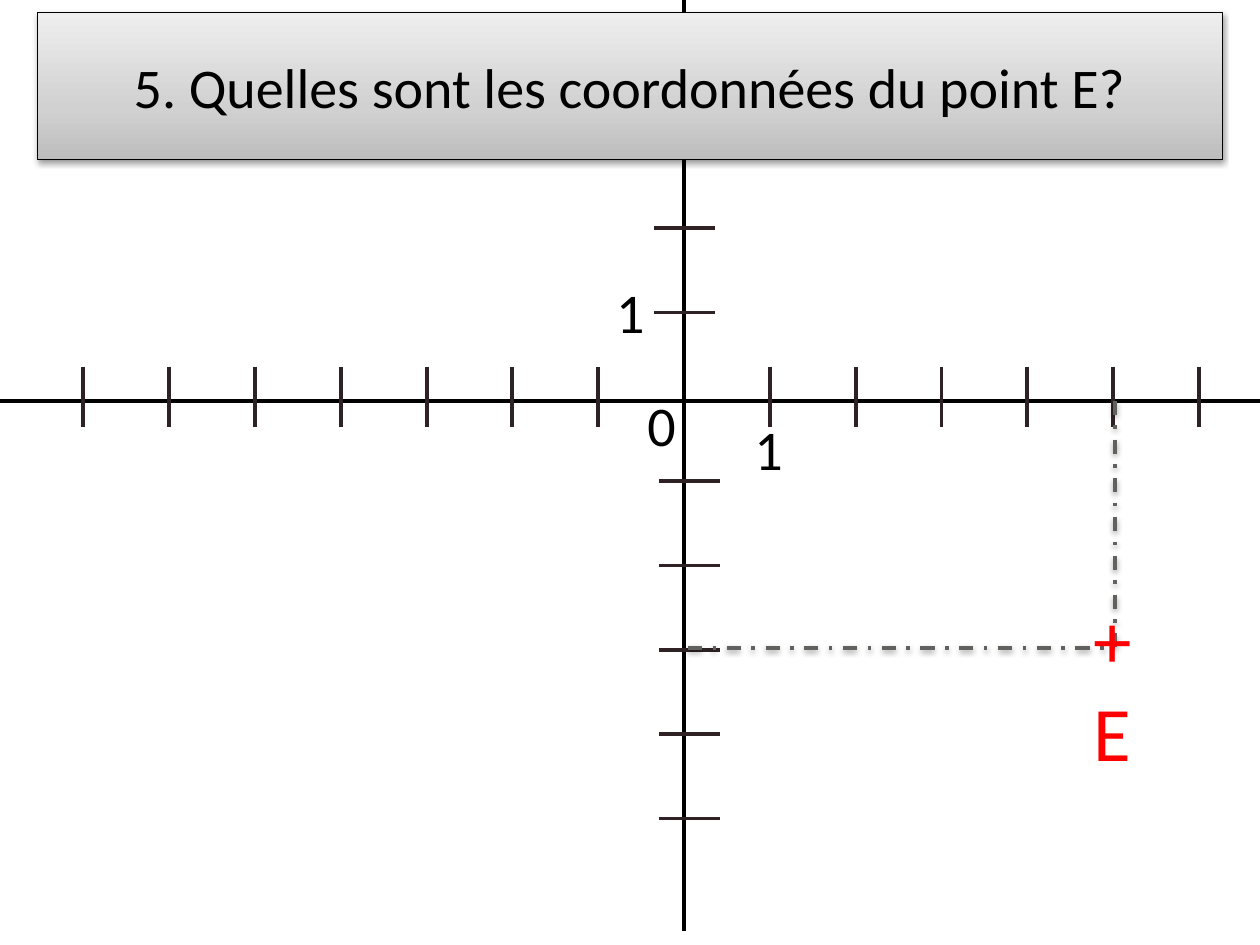
import pptx
import pptx.util
import pptx.dml.color
import pptx.enum.dml
import pptx.enum.shapes
import pptx.enum.text
import pptx.oxml
import pptx.oxml.ns
from pptx.util import Cm

NS = pptx.oxml.ns.nsdecls("a")
SHADOW = ('<a:outerShdw blurRad="40000" dist="20000" dir="5400000" rotWithShape="0">'
          '<a:srgbClr val="000000"><a:alpha val="38000"/></a:srgbClr></a:outerShdw>')
rgb = pptx.dml.color.RGBColor.from_string


def style_line(s, color, width, effect=""):
    s.line.color.rgb = rgb(color)
    s.line.width = pptx.util.Pt(width)
    s._element.spPr.append(
        pptx.oxml.parse_xml(f"<a:effectLst {NS}>{effect}</a:effectLst>"))


def add_line(x1, y1, x2, y2, color, width=2.25, effect=""):
    s = sld.shapes.add_connector(pptx.enum.shapes.MSO_CONNECTOR.STRAIGHT,
                                 Cm(x1), Cm(y1), Cm(x2), Cm(y2))
    style_line(s, color, width, effect)
    return s


prs = pptx.Presentation()
prs.slide_width, prs.slide_height = Cm(25.4), Cm(19.05)
sld = prs.slides.add_slide(prs.slide_layouts[6])

# Axes
x0, y0 = 13.79, 8.08
add_line(0, y0, 25.4, y0, "000000")
add_line(x0, 0, x0, 18.77, "000000")

# Graduations
half = 0.61
for i in range(-7, 7):
    if i:
        x = x0 + 1.73 * i
        add_line(x, 8 - half, x, 8 + half, "2E2224")
for i in range(-5, 3):
    if i:
        y = 8 - 1.7 * i
        mid = 13.8 if i > 0 else 13.9
        add_line(mid - half, y, mid + half, y, "2E2224")

# Title banner
s = sld.shapes.add_shape(pptx.enum.shapes.MSO_SHAPE.RECTANGLE,
                         Cm(0.76), Cm(0.25), Cm(23.88), Cm(2.97))
stops = "".join(f'<a:gs pos="{pos}"><a:srgbClr val="{color}"/></a:gs>' for pos, color in
                [(0, "BDBDBD"), (35000, "D1D1D1"), (100000, "EEEEEE")])
s._element.spPr.append(pptx.oxml.parse_xml(
    f'<a:gradFill {NS} rotWithShape="1"><a:gsLst>{stops}</a:gsLst>'
    '<a:lin ang="16200000" scaled="0"/></a:gradFill>'))
style_line(s, "000000", 0.75, SHADOW)
tf = s.text_frame
tf.word_wrap = True
tf.vertical_anchor = pptx.enum.text.MSO_ANCHOR.MIDDLE
p = tf.paragraphs[0]
p.text = "5. Quelles sont les coordonnées du point E?"
p.alignment = pptx.enum.text.PP_ALIGN.CENTER
p.font.name, p.font.size = "Calibri", pptx.util.Pt(32)
p.font.color.rgb = rgb("000000")

# Projections of point E onto the axes
ex, ey = 22.48, 13.06
for ax, ay in [(ex, y0), (13.87, ey)]:
    s = add_line(ax, ay, ex, ey, "61625E", 2, SHADOW)
    s.line.dash_style = pptx.enum.dml.MSO_LINE.DASH_DOT

# Point E and axis labels
for text, x, y, w, h, size, color in [
    ("+\nE", 21.79, 11.81, 3.6, 4.01, 44, "FF0000"),
    ("1", 12.17, 5.46, 1.27, 1.63, 32, "000000"),
    ("1", 14.96, 8.23, 1.27, 1.63, 32, "000000"),
    ("0", 12.8, 7.75, 1.27, 1.63, 32, "000000"),
]:
    tf = sld.shapes.add_textbox(Cm(x), Cm(y), Cm(w), Cm(h)).text_frame
    tf.word_wrap = True
    tf.text = text
    for p in tf.paragraphs:
        p.font.name, p.font.size = "Calibri", pptx.util.Pt(size)
        p.font.color.rgb = rgb(color)

prs.save("out.pptx")
